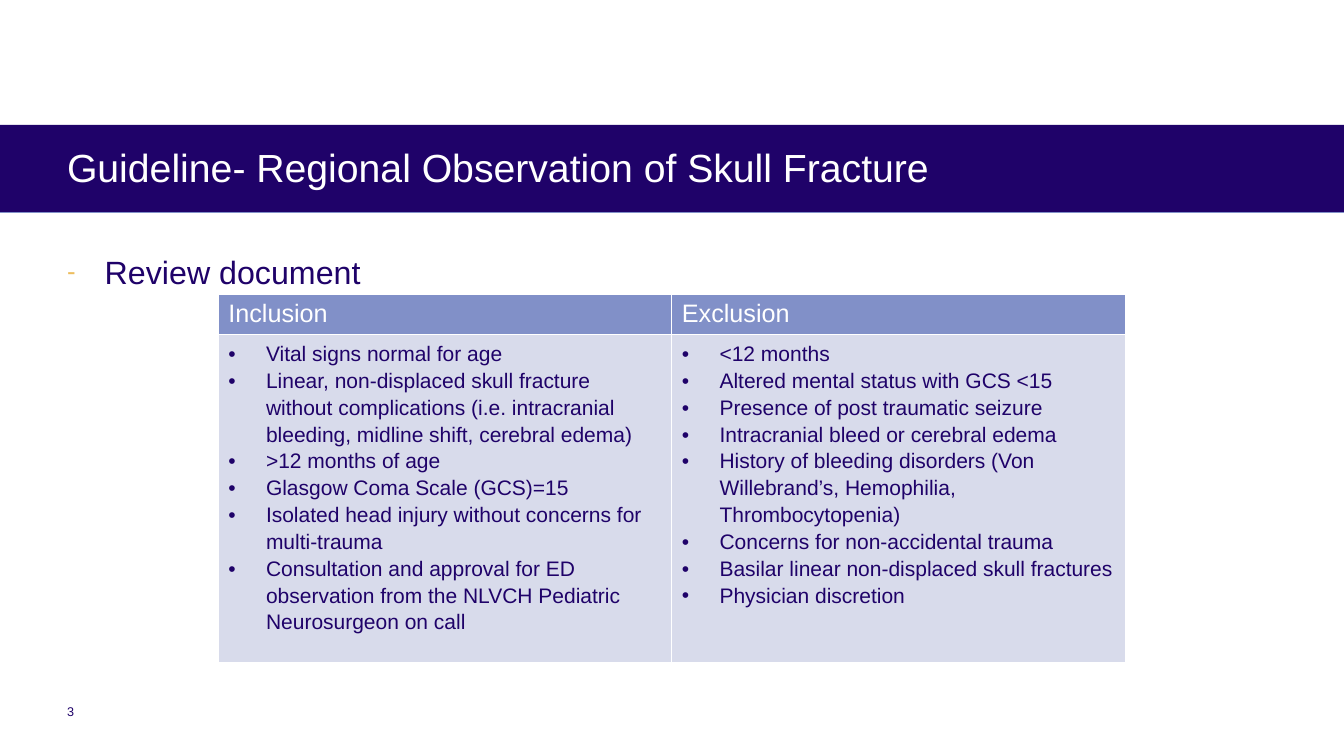
from dataclasses import dataclass

from lxml import etree
from pptx import Presentation
from pptx.dml.color import RGBColor
from pptx.enum.shapes import MSO_CONNECTOR, MSO_SHAPE
from pptx.enum.text import MSO_ANCHOR, MSO_AUTO_SIZE, PP_ALIGN
from pptx.oxml import parse_xml
from pptx.oxml.ns import nsdecls, qn
from pptx.util import Cm, Pt

TITLE = "Guideline- Regional Observation of Skull Fracture"
AGENDA_ITEM = "Review document"
PAGE_NUMBER = "3"
CRITERIA = {
    "Inclusion": [
        "Vital signs normal for age",
        "Linear, non-displaced skull fracture without complications "
        "(i.e. intracranial bleeding, midline shift, cerebral edema)",
        ">12 months of age",
        "Glasgow Coma Scale (GCS)=15",
        "Isolated head injury without concerns for multi-trauma",
        "Consultation and approval for ED observation from the NLVCH "
        "Pediatric Neurosurgeon on call",
    ],
    "Exclusion": [
        "<12 months",
        "Altered mental status with GCS <15",
        "Presence of post traumatic seizure",
        "Intracranial bleed or cerebral edema",
        "History of bleeding disorders (Von Willebrand’s, Hemophilia, "
        "Thrombocytopenia)",
        "Concerns for non-accidental trauma",
        "Basilar linear non-displaced skull fractures",
        "Physician discretion",
    ],
}


@dataclass(frozen=True)
class Theme:
    font: str = "Arial"
    navy: str = "1F0269"
    periwinkle: str = "8190C8"
    pale: str = "D8DBEB"
    gold: str = "EDBD5E"
    white: str = "FFFFFF"
    title_size: int = 28
    agenda_size: int = 23
    header_size: int = 18
    criteria_size: int = 15
    number_size: int = 9


THEME = Theme()
SLIDE_WIDTH, SLIDE_HEIGHT = Cm(33.87), Cm(19.05)
MARGIN = Cm(1.69)
BAND_TOP, BAND_HEIGHT = Cm(3.15), Cm(2.21)
COLUMN_WIDTH = Cm(11.43)
HEADER_HEIGHT, CRITERIA_HEIGHT = Cm(1.0), Cm(8.28)
INDENT = Cm(0.95)


def style(paragraph, size, color):
    for run in paragraph.runs:
        run.font.name = THEME.font
        run.font.size = Pt(size)
        run.font.color.rgb = RGBColor.from_string(color)


def add_bullet(paragraph, mark, color=None, percent=100):
    properties = paragraph._p.get_or_add_pPr()
    properties.set("marL", str(INDENT))
    properties.set("indent", str(-INDENT))
    if color:
        bullet_color = etree.SubElement(properties, qn("a:buClr"))
        etree.SubElement(bullet_color, qn("a:srgbClr"), val=color)
    etree.SubElement(properties, qn("a:buSzPct"), val=str(percent * 1000))
    etree.SubElement(properties, qn("a:buFont"), typeface=THEME.font)
    etree.SubElement(properties, qn("a:buChar"), char=mark)


def fill_frame(frame, text, size, color):
    """Put one left-aligned line at the top of a frame without insets."""
    frame.margin_left = frame.margin_right = 0
    frame.margin_top = frame.margin_bottom = 0
    frame.word_wrap = True
    frame.auto_size = MSO_AUTO_SIZE.NONE
    frame.vertical_anchor = MSO_ANCHOR.TOP
    frame.text = text
    line = frame.paragraphs[0]
    line.alignment = PP_ALIGN.LEFT
    style(line, size, color)
    return line


def paint_cell(cell, color):
    """Give a cell thin white borders and a solid fill."""
    properties = cell._tc.get_or_add_tcPr()
    for side in ("lnL", "lnR", "lnT", "lnB"):
        properties.append(parse_xml(
            f'<a:{side} {nsdecls("a")} w="{Pt(1)}"><a:solidFill>'
            f'<a:srgbClr val="{THEME.white}"/></a:solidFill></a:{side}>'))
    cell.fill.solid()
    cell.fill.fore_color.rgb = RGBColor.from_string(color)


def add_title_band(slide):
    band = slide.shapes.add_shape(
        MSO_SHAPE.RECTANGLE, 0, BAND_TOP, SLIDE_WIDTH, BAND_HEIGHT)
    band.shadow.inherit = False
    band.fill.solid()
    band.fill.fore_color.rgb = RGBColor.from_string(THEME.navy)
    band.line.fill.background()

    edge_top = BAND_TOP + BAND_HEIGHT
    edge = slide.shapes.add_connector(
        MSO_CONNECTOR.STRAIGHT, 0, edge_top, SLIDE_WIDTH, edge_top)
    edge.line.color.rgb = RGBColor.from_string(THEME.periwinkle)
    edge.line.width = Pt(1)
    etree.SubElement(edge._element.spPr, qn("a:effectLst"))

    title = slide.shapes.title
    title.left, title.top = MARGIN, Cm(3.61)
    title.width, title.height = Cm(23.42), Cm(1.55)
    fill_frame(title.text_frame, TITLE, THEME.title_size, THEME.white)
    edge._element.addnext(title._element)  # bring the title in front of the band


def add_criteria_table(slide):
    width = COLUMN_WIDTH * len(CRITERIA)
    table = slide.shapes.add_table(
        2, len(CRITERIA), Cm(5.5), Cm(7.42),
        width, HEADER_HEIGHT + CRITERIA_HEIGHT).table
    table.rows[0].height, table.rows[1].height = HEADER_HEIGHT, CRITERIA_HEIGHT
    for column, (heading, criteria) in enumerate(CRITERIA.items()):
        table.columns[column].width = COLUMN_WIDTH
        header, body = table.cell(0, column), table.cell(1, column)
        paint_cell(header, THEME.periwinkle)
        paint_cell(body, THEME.pale)
        header.text_frame.text = heading
        style(header.text_frame.paragraphs[0], THEME.header_size, THEME.white)
        header.text_frame.paragraphs[0].runs[0].font.bold = False
        body.text_frame.text = "\n".join(criteria)
        for criterion in body.text_frame.paragraphs:
            add_bullet(criterion, "•")
            criterion.line_spacing = 1.15
            style(criterion, THEME.criteria_size, THEME.navy)


def main():
    deck = Presentation()
    deck.slide_width, deck.slide_height = SLIDE_WIDTH, SLIDE_HEIGHT
    slide = deck.slides.add_slide(deck.slide_layouts.get_by_name("Title Only"))
    add_title_band(slide)

    agenda = slide.shapes.add_textbox(MARGIN, Cm(6.35), Cm(30.48), Cm(10.8))
    agenda_line = fill_frame(
        agenda.text_frame, AGENDA_ITEM, THEME.agenda_size, THEME.navy)
    add_bullet(agenda_line, "-", THEME.gold, 80)

    number = slide.shapes.add_textbox(MARGIN, Cm(17.75), Cm(2.77), Cm(0.99))
    fill_frame(number.text_frame, PAGE_NUMBER, THEME.number_size, THEME.navy)

    add_criteria_table(slide)
    deck.save("out.pptx")


if __name__ == "__main__":
    main()
